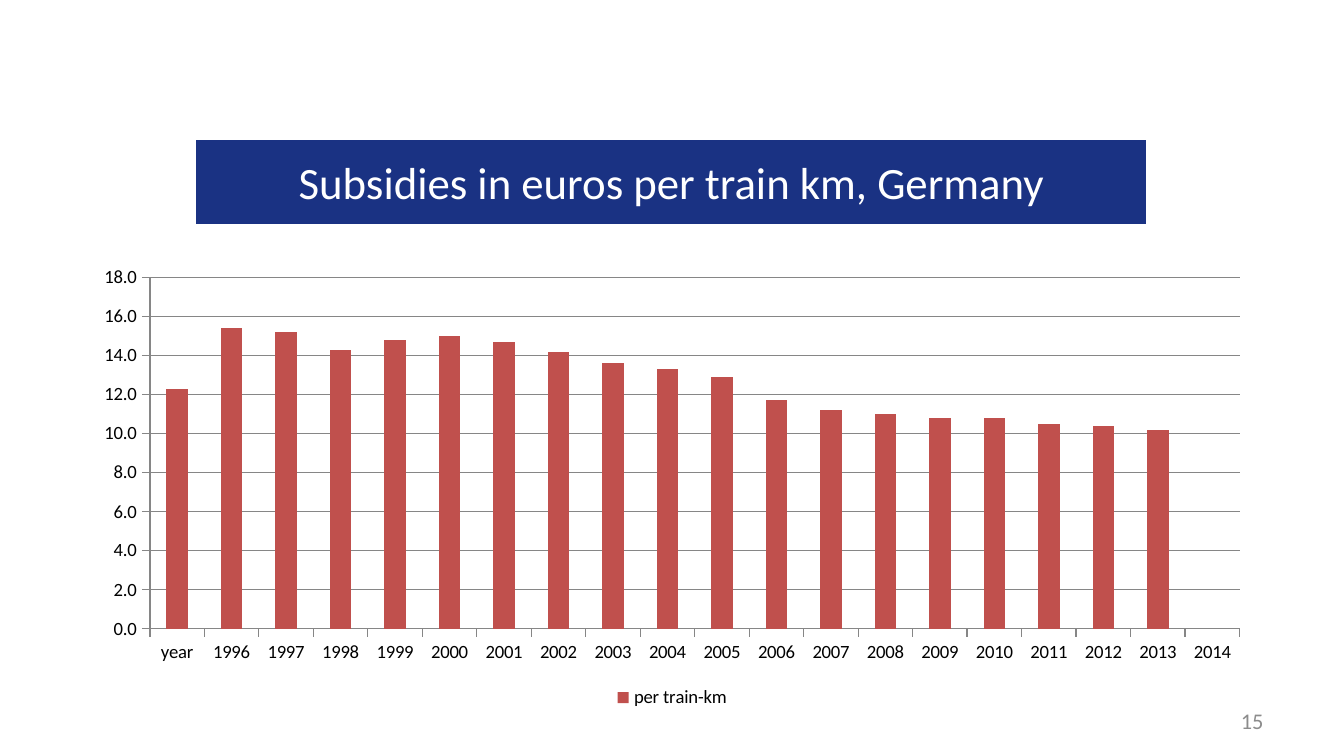
from lxml import etree
from pptx import Presentation
from pptx.chart import data as chart_data
from pptx.dml.color import RGBColor
from pptx.enum import chart as ch, text as tx
from pptx.oxml import ns
from pptx.util import Pt

FONT = "Calibri"
NAVY = RGBColor(0x1A, 0x32, 0x83)
WHITE = RGBColor(0xFF, 0xFF, 0xFF)
BLACK = RGBColor(0, 0, 0)
GREY = RGBColor(0x8C, 0x8C, 0x8C)
AXIS_GREY = RGBColor(0x86, 0x86, 0x86)
RED = RGBColor(0xC0, 0x50, 0x4D)

TITLE = "Subsidies in euros per train km, Germany"
PAGE_NUMBER = "15"
SERIES = "per train-km"
CATEGORIES = ["year"] + [str(year) for year in range(1996, 2015)]
SUBSIDIES = [12.3, 15.4, 15.2, 14.3, 14.8, 15, 14.7, 14.2, 13.6, 13.3,
             12.9, 11.7, 11.2, 11, 10.8, 10.8, 10.5, 10.4, 10.2, None]

# left, top, width, height in points
TITLE_BOX = (103.7, 73.4, 511.9, 48.2)
NUMBER_BOX = (639.4, 375.1, 44.6, 21.6)
CHART_BOX = (43.2, 138.2, 633.6, 244.1)


def points(box):
    return [Pt(length) for length in box]


def set_font(font, size, color):
    font.name, font.size, font.bold = FONT, Pt(size), False
    font.color.rgb = color


def write(shape, content, *, size, color, align):
    frame = shape.text_frame
    frame.word_wrap = True
    frame.auto_size = tx.MSO_AUTO_SIZE.NONE
    frame.vertical_anchor = tx.MSO_ANCHOR.MIDDLE
    paragraph = frame.paragraphs[0]
    paragraph.alignment = align
    run = paragraph.add_run()
    run.text = content
    set_font(run.font, size, color)


def add_title(slide):
    title = slide.shapes.title
    title.left, title.top, title.width, title.height = points(TITLE_BOX)
    outline = etree.SubElement(title.element.spPr, ns.qn("a:prstGeom"), prst="roundRect")
    etree.SubElement(outline, ns.qn("a:avLst"))
    title.fill.solid()
    title.fill.fore_color.rgb = NAVY
    title.line.color.rgb = WHITE
    title.line.width = Pt(3)
    write(title, TITLE, size=24, color=WHITE, align=tx.PP_ALIGN.CENTER)


def add_subsidy_chart(slide):
    subsidies = chart_data.CategoryChartData(number_format="0.0")
    subsidies.categories = CATEGORIES
    subsidies.add_series(SERIES, SUBSIDIES)
    chart = slide.shapes.add_chart(
        ch.XL_CHART_TYPE.COLUMN_CLUSTERED, *points(CHART_BOX), subsidies).chart
    set_font(chart.font, 10, BLACK)
    chart.has_title = False
    chart.has_legend = True
    chart.legend.position = ch.XL_LEGEND_POSITION.BOTTOM
    chart.legend.include_in_layout = False

    plot = chart.plots[0]
    plot.gap_width = 150
    plot.vary_by_categories = False
    columns = plot.series[0]
    columns.format.fill.solid()
    columns.format.fill.fore_color.rgb = RED

    years, euros = chart.category_axis, chart.value_axis
    euros.minimum_scale, euros.maximum_scale, euros.major_unit = 0, 18, 2
    euros.has_major_gridlines = True
    euros.tick_labels.number_format = "0.0"
    euros.tick_labels.number_format_is_linked = False
    for axis in (years, euros):
        axis.major_tick_mark = ch.XL_TICK_MARK.OUTSIDE
    for ruled in (years, euros, euros.major_gridlines):
        ruled.format.line.color.rgb = AXIS_GREY
        ruled.format.line.width = Pt(0.75)


def main():
    deck = Presentation()
    deck.slide_width, deck.slide_height = Pt(720), Pt(405)
    slide = deck.slides.add_slide(deck.slide_layouts[5])
    add_title(slide)
    number = slide.shapes.add_textbox(*points(NUMBER_BOX))
    write(number, PAGE_NUMBER, size=12, color=GREY, align=tx.PP_ALIGN.RIGHT)
    add_subsidy_chart(slide)
    deck.save("out.pptx")


if __name__ == "__main__":
    main()
